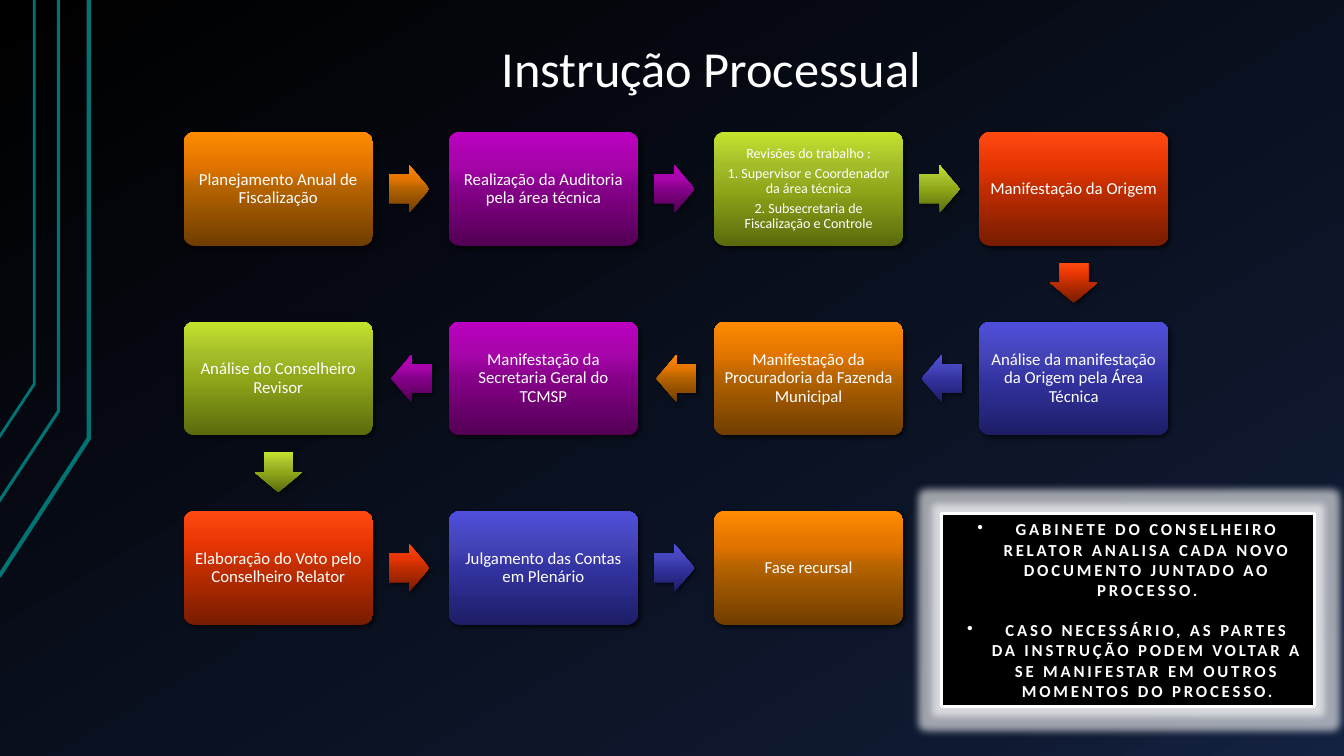
import dataclasses
import enum
import typing

import lxml.etree
import pptx
import pptx.dml.color
import pptx.enum.shapes
import pptx.enum.text
import pptx.oxml.ns
import pptx.util

Inches = pptx.util.Inches
Pt = pptx.util.Pt
qn = pptx.oxml.ns.qn
Stops = tuple[tuple[int, str], ...]


def four_stops(*colours: str) -> Stops:
    return tuple(zip((0, 50, 70, 100), colours))


# Colours and type sizes
@dataclasses.dataclass(frozen=True)
class Theme:
    font: str = "Calibri"
    title_size: int = 36
    step_size: int = 12
    small_size: int = 10
    white: str = "FFFFFF"
    black: str = "000000"
    teal: str = "007373"
    background: Stops = ((0, "000000"), (85, "0F1931"), (100, "142242"))
    orange: Stops = four_stops("6F3D00", "B36200", "E27400", "FE8B00")
    purple: Stops = four_stops("520054", "850088", "A505A9", "BC00C0")
    green: Stops = four_stops("5A6A0D", "8FA719", "A3BC2A", "C4E32D")
    red: Stops = four_stops("771C00", "C02D00", "E63503", "FF4911")
    blue: Stops = four_stops("1D1D66", "3333A1", "4444B8", "4F4FDD")


THEME = Theme()


@dataclasses.dataclass(frozen=True)
class Step:
    text: str
    stops: Stops
    size: int = THEME.step_size


@dataclasses.dataclass(frozen=True)
class FrameLine:
    points: tuple[tuple[float, float], ...]
    width: float


class Direction(enum.Enum):
    """Rotation of the arrow and its offset from the step it leaves."""
    RIGHT = (0, 2.04, 0.33)
    DOWN = (90, 0.74, 1.26)
    LEFT = (180, -0.57, 0.33)


# Content
STEPS = (
    Step("Planejamento Anual de Fiscalização", THEME.orange),
    Step("Realização da Auditoria pela área técnica", THEME.purple),
    Step("Revisões do trabalho :\n1. Supervisor e Coordenador da área técnica\n"
         "2. Subsecretaria de Fiscalização e Controle", THEME.green, THEME.small_size),
    Step("Manifestação da Origem", THEME.red),
    Step("Análise da manifestação da Origem pela Área Técnica", THEME.blue),
    Step("Manifestação da Procuradoria da Fazenda Municipal", THEME.orange),
    Step("Manifestação da Secretaria Geral do TCMSP", THEME.purple),
    Step("Análise do Conselheiro Revisor", THEME.green),
    Step("Elaboração do Voto pelo Conselheiro Relator", THEME.red),
    Step("Julgamento das Contas em Plenário", THEME.blue),
    Step("Fase recursal", THEME.orange),
)
REMARKS = (
    "GABINETE DO CONSELHEIRO RELATOR ANALISA CADA NOVO DOCUMENTO JUNTADO AO PROCESSO.",
    "CASO NECESSÁRIO, AS PARTES DA INSTRUÇÃO PODEM VOLTAR A SE MANIFESTAR EM OUTROS "
    "MOMENTOS DO PROCESSO.",
)
FRAME_LINES = (
    FrameLine(((-0.01, 5.72), (0.88, 4.35), (0.88, 0)), 3),
    FrameLine(((-0.02, 4.99), (0.58, 4.08), (0.58, 0)), 2.25),
    FrameLine(((-0.01, 4.34), (0.34, 3.81), (0.34, 0)), 2),
)

# Grid of steps, in inches
COLUMNS = 4
GRID_LEFT, GRID_TOP = 1.82, 1.31
COLUMN_STEP, ROW_STEP = 2.63, 1.88
STEP_WIDTH, STEP_HEIGHT = 1.88, 1.13
ARROW_WIDTH, ARROW_HEIGHT = 0.4, 0.47


def rgb(colour: str) -> pptx.dml.color.RGBColor:
    return pptx.dml.color.RGBColor.from_string(colour)


def set_gradient(fill: typing.Any, element: typing.Any, stops: Stops, angle: int) -> None:
    fill.gradient()
    fill.gradient_angle = angle
    gradient = element.find(".//" + qn("a:gradFill"))
    gradient.set("rotWithShape", "0")
    stop_list = gradient.find(qn("a:gsLst"))
    for stop in list(stop_list):
        stop_list.remove(stop)
    for position, colour in stops:
        stop = lxml.etree.SubElement(stop_list, qn("a:gs"), pos=str(position * 1000))
        lxml.etree.SubElement(stop, qn("a:srgbClr"), val=colour)


def add_effect(shape: typing.Any, tag: str, colour: str, alpha: int, **attributes: str) -> None:
    shape.shadow.inherit = False
    effects = shape.element.spPr.find(qn("a:effectLst"))
    effect = lxml.etree.SubElement(effects, qn(tag), **attributes)
    effect_colour = lxml.etree.SubElement(effect, qn("a:srgbClr"), val=colour)
    lxml.etree.SubElement(effect_colour, qn("a:alpha"), val=str(alpha * 1000))


def format_text(text_frame: typing.Any, size: int, bold: bool = False) -> None:
    text_frame.word_wrap = True
    for paragraph in text_frame.paragraphs:
        paragraph.alignment = pptx.enum.text.PP_ALIGN.CENTER
        for run in paragraph.runs:
            run.font.name = THEME.font
            run.font.size = Pt(size)
            run.font.bold = bold
            run.font.color.rgb = rgb(THEME.white)


def set_margins(text_frame: typing.Any, horizontal: float, vertical: float) -> None:
    text_frame.margin_left = text_frame.margin_right = Inches(horizontal)
    text_frame.margin_top = text_frame.margin_bottom = Inches(vertical)


def add_frame_line(slide: typing.Any, frame_line: FrameLine) -> None:
    points = [(Inches(x), Inches(y)) for x, y in frame_line.points]
    builder = slide.shapes.build_freeform(*points[0])
    builder.add_line_segments(points[1:], close=False)
    shape = builder.convert_to_shape()
    shape.fill.background()
    shape.line.color.rgb = rgb(THEME.teal)
    shape.line.width = Pt(frame_line.width)
    shape.shadow.inherit = False


def add_title(slide: typing.Any, text: str) -> None:
    title = slide.shapes.title
    title.left, title.top = Inches(1.39), Inches(0.36)
    title.width, title.height = Inches(11.33), Inches(0.69)
    title.text_frame.text = text
    title.text_frame.vertical_anchor = pptx.enum.text.MSO_ANCHOR.BOTTOM
    title.text_frame.paragraphs[0].line_spacing = 0.9
    set_margins(title.text_frame, 0.13, 0.07)
    format_text(title.text_frame, THEME.title_size)


def add_gradient_shape(slide: typing.Any, kind: typing.Any, left: float, top: float,
                       width: float, height: float, stops: Stops) -> typing.Any:
    shape = slide.shapes.add_shape(kind, Inches(left), Inches(top), Inches(width), Inches(height))
    set_gradient(shape.fill, shape.element, stops, 90)
    shape.line.fill.background()
    add_effect(shape, "a:outerShdw", THEME.black, 60, blurRad=str(Pt(3)), dist=str(Pt(2)),
               dir=str(45 * 60000), algn="ctr", rotWithShape="0")
    return shape


def add_step(slide: typing.Any, index: int, step: Step) -> None:
    # Rows run alternately rightwards and leftwards
    row, place = divmod(index, COLUMNS)
    leftwards = row % 2 == 1
    column = COLUMNS - 1 - place if leftwards else place
    left, top = GRID_LEFT + column * COLUMN_STEP, GRID_TOP + row * ROW_STEP
    box = add_gradient_shape(slide, pptx.enum.shapes.MSO_SHAPE.ROUNDED_RECTANGLE,
                             left, top, STEP_WIDTH, STEP_HEIGHT, step.stops)
    box.adjustments[0] = 0.1
    box.text_frame.text = step.text
    box.text_frame.vertical_anchor = pptx.enum.text.MSO_ANCHOR.MIDDLE
    set_margins(box.text_frame, 0.05, 0.05)
    format_text(box.text_frame, step.size)
    for paragraph in box.text_frame.paragraphs:
        paragraph.line_spacing = 0.9
        paragraph.space_after = Pt(0.35 * step.size)

    if index == len(STEPS) - 1:
        return
    if place == COLUMNS - 1:
        direction = Direction.DOWN
    else:
        direction = Direction.LEFT if leftwards else Direction.RIGHT
    rotation, across, down = direction.value
    arrow = add_gradient_shape(slide, pptx.enum.shapes.MSO_SHAPE.RIGHT_ARROW, left + across,
                               top + down, ARROW_WIDTH, ARROW_HEIGHT, step.stops)
    arrow.adjustments[0], arrow.adjustments[1] = 0.6, 0.5
    arrow.rotation = rotation


def add_remarks(slide: typing.Any) -> None:
    box = slide.shapes.add_shape(pptx.enum.shapes.MSO_SHAPE.RECTANGLE, Inches(9.34),
                                 Inches(5.09), Inches(3.7), Inches(1.92))
    box.fill.solid()
    box.fill.fore_color.rgb = rgb(THEME.black)
    box.line.color.rgb = rgb(THEME.white)
    box.line.width = Pt(2.25)
    add_effect(box, "a:glow", THEME.white, 60, rad=str(Pt(11)))
    box.text_frame.text = "\n".join(REMARKS)
    box.text_frame.vertical_anchor = pptx.enum.text.MSO_ANCHOR.MIDDLE
    format_text(box.text_frame, THEME.step_size, bold=True)
    for paragraph in box.text_frame.paragraphs:
        properties = paragraph._p.get_or_add_pPr()
        properties.set("marL", str(Inches(0.38)))
        properties.set("indent", str(Inches(-0.38)))
        lxml.etree.SubElement(properties, qn("a:buChar"), char="•")
        for run in paragraph.runs:
            run.font._element.set("spc", "200")
    box.text_frame.paragraphs[0].space_after = Pt(14.5)
    # Bullets follow the spacing element in paragraph properties
    first = box.text_frame.paragraphs[0]._p.pPr
    first.append(first.find(qn("a:buChar")))


def main() -> None:
    presentation = pptx.Presentation()
    presentation.slide_width, presentation.slide_height = Inches(13.33), Inches(7.5)
    slide = presentation.slides.add_slide(presentation.slide_layouts[5])
    set_gradient(slide.background.fill, slide.element, THEME.background, 300)
    for frame_line in FRAME_LINES:
        add_frame_line(slide, frame_line)
    add_title(slide, "Instrução Processual")
    for index, step in enumerate(STEPS):
        add_step(slide, index, step)
    add_remarks(slide)
    presentation.save("out.pptx")


if __name__ == "__main__":
    main()
